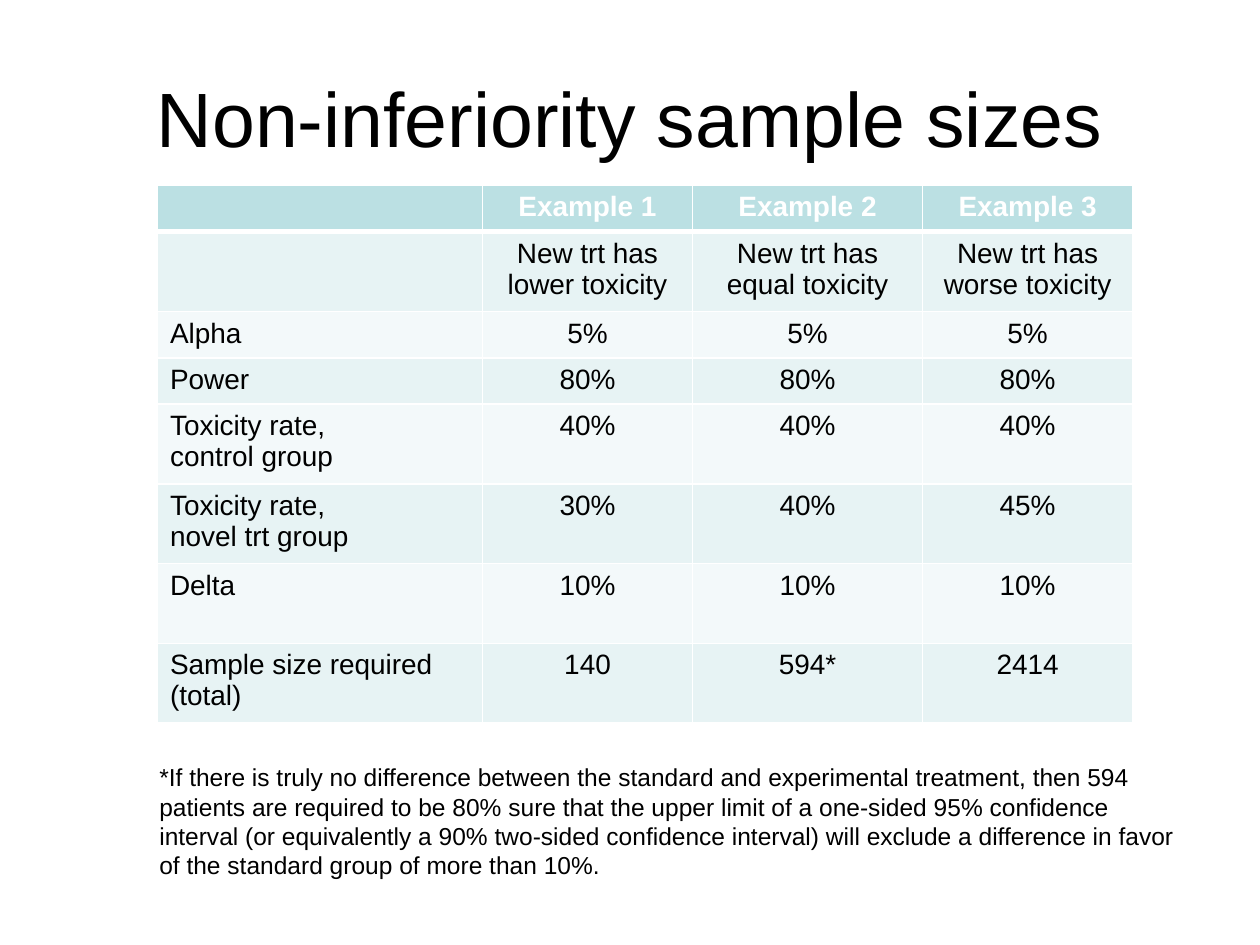
from lxml.etree import SubElement
from pptx import Presentation
from pptx.dml.color import RGBColor
from pptx.enum.text import MSO_ANCHOR as Anchor, PP_ALIGN as Align
from pptx.oxml.ns import qn
from pptx.util import Pt

FONT = "Arial"
BLACK, WHITE = "000000", "FFFFFF"
HEADER, BAND_DARK, BAND_LIGHT = "BBE0E3", "E7F3F4", "F3F9FA"

COL_WIDTHS = [185.75, 120, 131.5, 120]
SHORT_ROW, TALL_ROW = 26.4, 45.6
TABLE_ROWS = [
    (SHORT_ROW, ["", "Example 1", "Example 2", "Example 3"]),
    (TALL_ROW, ["", "New trt has lower toxicity", "New trt has equal toxicity",
                "New trt has worse toxicity"]),
    (SHORT_ROW, ["Alpha", "5%", "5%", "5%"]),
    (SHORT_ROW, ["Power", "80%", "80%", "80%"]),
    (TALL_ROW, ["Toxicity rate,\ncontrol group", "40%", "40%", "40%"]),
    (TALL_ROW, ["Toxicity rate,\nnovel trt group", "30%", "40%", "45%"]),
    (TALL_ROW, ["Delta", "10%", "10%", "10%"]),
    (TALL_ROW, ["Sample size required (total)", "140", "594*", "2414"]),
]
FOOTNOTE = (
    "*If there is truly no difference between the standard and experimental "
    "treatment, then 594 patients are required to be 80% sure that the upper "
    "limit of a one-sided 95% confidence interval (or equivalently a 90% "
    "two-sided confidence interval) will exclude a difference in favor of the "
    "standard group of more than 10%."
)


def rgb(color):
    return RGBColor.from_string(color)


def write(tf, text, size=16, color=BLACK, bold=False, align=Align.LEFT):
    """Fill a text frame, one paragraph for each line of text."""
    tf.word_wrap = True
    for i, line in enumerate(text.split("\n")):
        p = tf.paragraphs[0] if i == 0 else tf.add_paragraph()
        p.alignment = align
        if not line:
            # An empty cell keeps the row height of its text size
            SubElement(p._p, qn("a:endParaRPr"), sz=str(size * 100))
            continue
        r = p.add_run()
        r.text = line
        r.font.name, r.font.size, r.font.bold = FONT, Pt(size), bold
        r.font.color.rgb = rgb(color)


def set_border(cell, **widths):
    """Draw white cell borders; sides are L, R, T and B, in that order."""
    tcPr = cell._tc.get_or_add_tcPr()
    for i, (side, width) in enumerate(widths.items()):
        ln = tcPr.makeelement(qn(f"a:ln{side}"), {"w": str(Pt(width))})
        fill = SubElement(ln, qn("a:solidFill"))
        SubElement(fill, qn("a:srgbClr"), val=WHITE)
        tcPr.insert(i, ln)


def add_text(slide, box, text, anchor=Anchor.TOP, **fmt):
    sp = slide.shapes.add_textbox(*map(Pt, box))
    sp.text_frame.vertical_anchor = anchor
    write(sp.text_frame, text, **fmt)


def add_sample_table(slide, left, top):
    height = sum(h for h, _ in TABLE_ROWS)
    table = slide.shapes.add_table(
        len(TABLE_ROWS), len(COL_WIDTHS),
        Pt(left), Pt(top), Pt(sum(COL_WIDTHS)), Pt(height)).table
    for col, width in zip(table.columns, COL_WIDTHS):
        col.width = Pt(width)
    for i, (row_height, texts) in enumerate(TABLE_ROWS):
        table.rows[i].height = Pt(row_height)
        is_header = i == 0
        band = HEADER if is_header else BAND_DARK if i % 2 else BAND_LIGHT
        for j, text in enumerate(texts):
            cell = table.cell(i, j)
            cell.fill.solid()
            cell.fill.fore_color.rgb = rgb(band)
            # A thick rule separates the header from the body
            set_border(cell, L=1, R=1, T=3 if i == 1 else 1,
                       B=3 if is_header else 1)
            write(cell.text_frame, text, bold=is_header,
                  color=WHITE if is_header else BLACK,
                  align=Align.CENTER if j else Align.LEFT)


def main():
    prs = Presentation()
    prs.slide_width, prs.slide_height = Pt(720), Pt(540)
    s = prs.slides.add_slide(prs.slide_layouts[6])

    # Title
    add_text(s, (36, 21.6, 648, 90), "Non-inferiority sample sizes",
             anchor=Anchor.MIDDLE, size=44, align=Align.CENTER)
    # Sample size table
    add_sample_table(s, 90, 106)
    # Footnote
    add_text(s, (84, 432, 606, 75), FOOTNOTE, size=14)

    prs.save("out.pptx")


if __name__ == "__main__":
    main()
